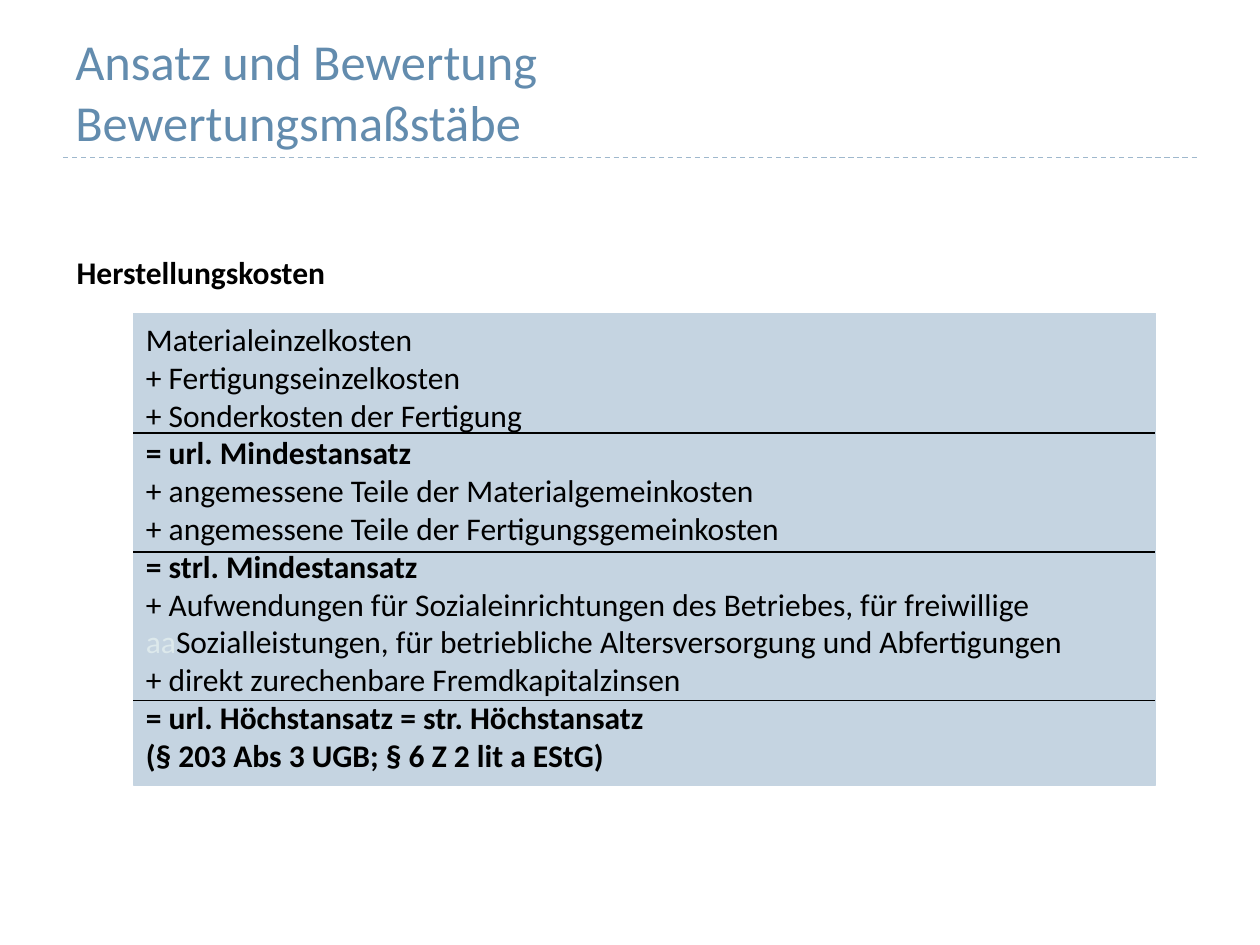
from lxml import etree
from pptx import Presentation
from pptx import util as u
from pptx.dml.color import RGBColor
from pptx.enum import dml, shapes, text
from pptx.oxml import ns

Pt = u.Pt
TITLE_BLUE = RGBColor(0x63, 0x8C, 0xAE)
RULE_BLUE = RGBColor(0x9F, 0xB8, 0xCD)
PANEL_BLUE = RGBColor(0xC5, 0xD4, 0xE1)
PALE = RGBColor(0xDD, 0xE9, 0xEC)
BLACK = RGBColor(0, 0, 0)


class Deck:
    font = "Calibri"
    size = 18

    def __init__(self, width, height):
        self.prs = Presentation()
        self.prs.slide_width, self.prs.slide_height = Pt(width), Pt(height)
        self.s = self.prs.slides.add_slide(self.prs.slide_layouts[6])

    def fill_text(self, tf, paragraphs, size=None, anchor=text.MSO_ANCHOR.TOP):
        """Each paragraph is a list of (text, bold, colour) runs."""
        tf.word_wrap = True
        tf.vertical_anchor = anchor
        for i, runs in enumerate(paragraphs):
            p = tf.paragraphs[0] if i == 0 else tf.add_paragraph()
            p.alignment = text.PP_ALIGN.LEFT
            for content, bold, color in runs:
                r = p.add_run()
                r.text = content
                r.font.name = self.font
                r.font.size = Pt(size or self.size)
                r.font.bold = bold
                r.font.color.rgb = color

    def label(self, x, y, w, h, paragraphs, **style):
        sp = self.s.shapes.add_textbox(Pt(x), Pt(y), Pt(w), Pt(h))
        self.fill_text(sp.text_frame, paragraphs, **style)

    def panel(self, x, y, w, h, color, paragraphs):
        sp = self.s.shapes.add_shape(
            shapes.MSO_SHAPE.RECTANGLE, Pt(x), Pt(y), Pt(w), Pt(h))
        sp.shadow.inherit = False
        sp.fill.solid()
        sp.fill.fore_color.rgb = color
        sp.line.color.rgb = color
        sp.line.width = Pt(0.75)
        self.fill_text(sp.text_frame, paragraphs)

    def rule(self, x, y, w, color, dash=None):
        c = self.s.shapes.add_connector(
            shapes.MSO_CONNECTOR.STRAIGHT, Pt(x), Pt(y), Pt(x + w), Pt(y))
        c.line.color.rgb = color
        c.line.width = Pt(0.75)
        if dash:
            c.line.dash_style = dash
        etree.SubElement(c._element.spPr, ns.qn("a:effectLst"))


def plain(content):
    return [(content, False, BLACK)]


def bold(content):
    return [(content, True, BLACK)]


def main():
    d = Deck(720, 540)

    # Title with dashed rule
    d.rule(36, 90, 648, RULE_BLUE, dml.MSO_LINE.DASH)
    d.label(36, 18, 648, 72,
            [[(line, False, TITLE_BLUE)]
             for line in ("Ansatz und Bewertung", "Bewertungsmaßstäbe")],
            size=28.8, anchor=text.MSO_ANCHOR.BOTTOM)

    # Section heading
    d.label(36.7, 141, 323, 29, [bold("Herstellungskosten")])

    # Cost build-up
    left, width = 76.3, 584
    d.panel(left, 179.3, width, 269.3, PANEL_BLUE, [
        plain("Materialeinzelkosten"),
        plain("+ Fertigungseinzelkosten"),
        plain("+ Sonderkosten der Fertigung"),
        bold("= url. Mindestansatz"),
        plain("+ angemessene Teile der Materialgemeinkosten"),
        plain("+ angemessene Teile der Fertigungsgemeinkosten"),
        bold("= strl. Mindestansatz"),
        plain("+ Aufwendungen für Sozialeinrichtungen des Betriebes, "
              "für freiwillige ")
        + [("aa", False, PALE)]
        + plain("Sozialleistungen, für betriebliche Altersversorgung "
                "und Abfertigungen"),
        plain("+ direkt zurechenbare Fremdkapitalzinsen"),
        bold("= url. Höchstansatz = str. Höchstansatz"),
        bold("(§ 203 Abs 3 UGB; § 6 Z 2 lit a EStG)"),
    ])

    # Subtotal lines
    for y in (247.5, 315.5, 400.3):
        d.rule(left, y, width, BLACK)

    d.prs.save("out.pptx")


if __name__ == "__main__":
    main()
